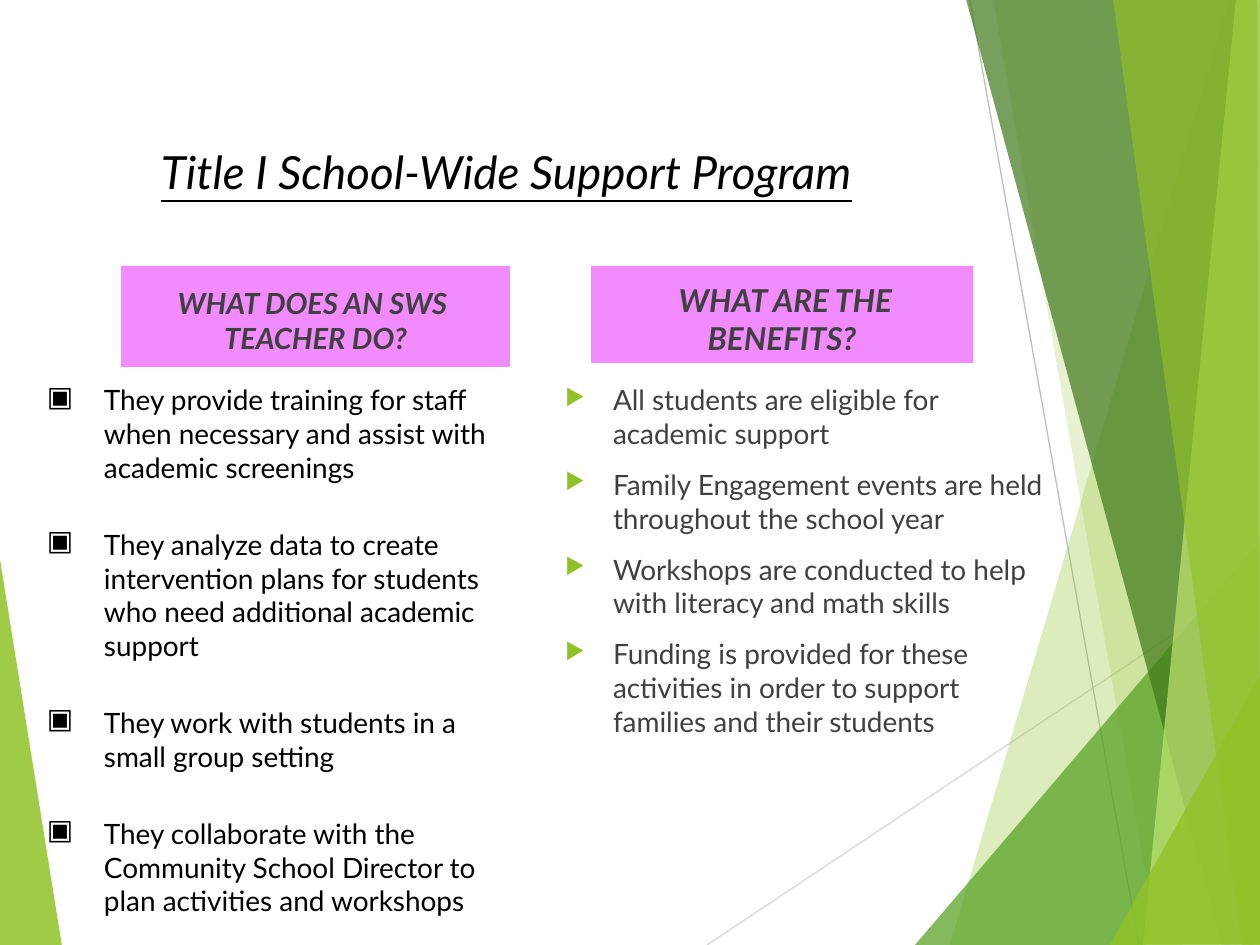
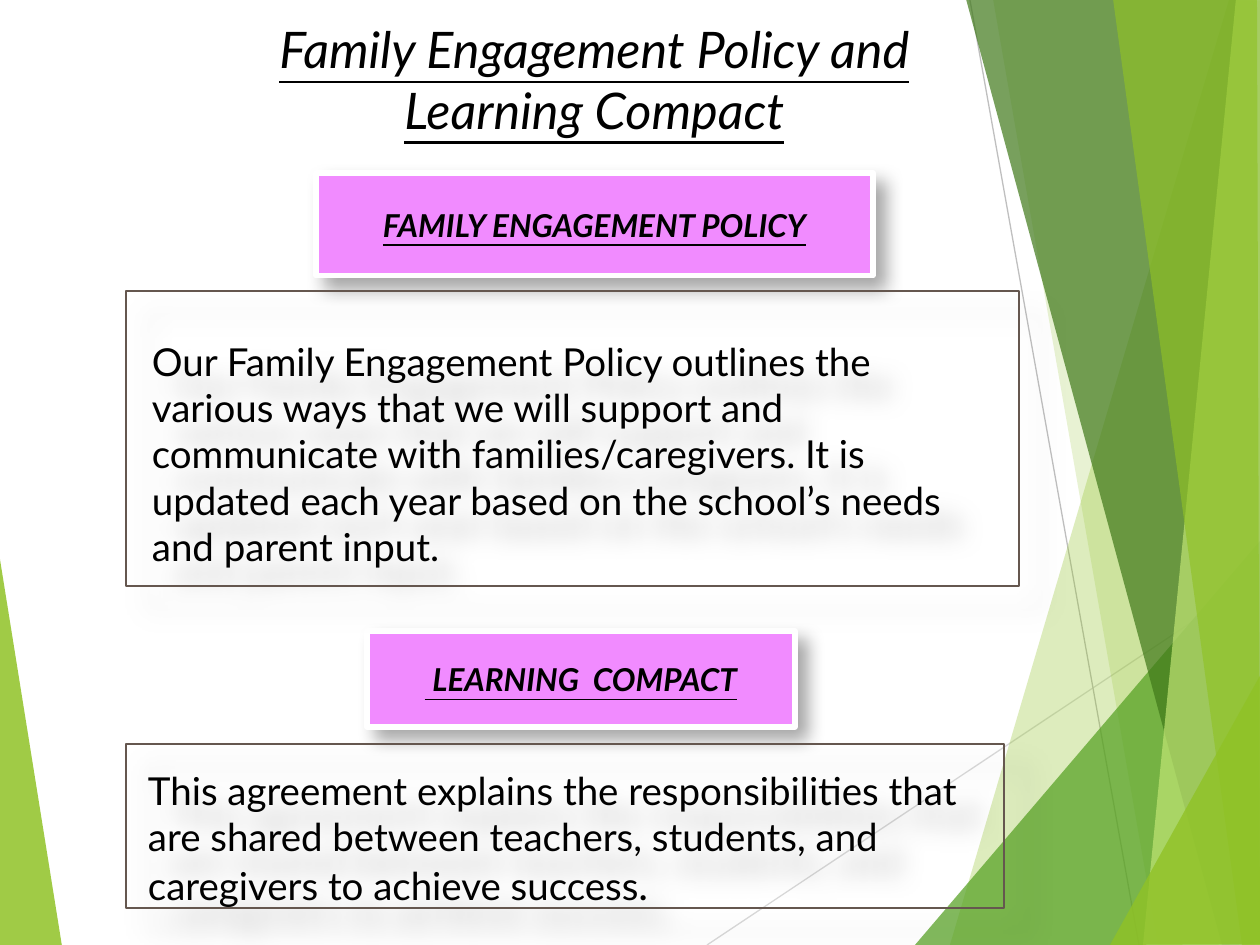
from lxml import etree
from pptx import Presentation
from pptx.dml.color import RGBColor
from pptx.enum.shapes import MSO_CONNECTOR, MSO_SHAPE
from pptx.enum.text import MSO_ANCHOR, PP_ALIGN
from pptx.oxml.ns import qn
from pptx.util import Emu, Pt

RECTANGLE = MSO_SHAPE.RECTANGLE
STRAIGHT = MSO_CONNECTOR.STRAIGHT
TOP, MIDDLE, BOTTOM = MSO_ANCHOR.TOP, MSO_ANCHOR.MIDDLE, MSO_ANCHOR.BOTTOM
LEFT, CENTER = PP_ALIGN.LEFT, PP_ALIGN.CENTER

PX = 914400 / 126
FONT = "Lato"
INSETS = (13, 6, 13, 6)
COLORS = {
    "lime": "90C226", "pale": "C0E474", "green": "54A021", "forest": "3F7819",
    "pink": "F18BFF", "brown": "65574F", "black": "000000", "gray": "404040",
    "white": "FFFFFF", "ray": "D9D9D9", "dark_ray": "BFBFBF",
}

# Colour, opacity in percent, corners
LEFT_FACET = ("lime", 85, [(-1, 553), (62, 946), (-1, 945)])
RIGHT_FACETS = [
    ("lime", 30, [(1229, 0), (950, 945), (1262, 946), (1261, 1)]),
    ("lime", 20, [(993, -1), (1158, 945), (1261, 945), (1261, -1)]),
    ("green", 72, [(915, 945), (1260, 541), (1261, 945)]),
    ("forest", 70, [(966, -1), (1222, 945), (1261, 944), (1261, -1)]),
    ("pale", 70, [(1236, -1), (1143, 945), (1261, 945), (1260, -1)]),
    ("lime", 65, [(1113, -1), (1242, 945), (1260, 945), (1257, -1)]),
    ("lime", 80, [(1110, 945), (1261, 674), (1261, 944)]),
]
RAYS = [("ray", (707, 945, 1261, 576)), ("dark_ray", (970, 0, 1139, 945))]

# Opacity in percent, blur and distance in points
HEADING_SHADOW = (35, 10.2, 8)
BODY_SHADOW = (25, 15, 18)

TEACHER_DUTIES = [
    "They provide training for staff when necessary and assist with academic screenings",
    "They analyze data to create intervention plans for students who need additional "
    "academic support",
    "They work with students in a small group setting",
    "They collaborate with the Community School Director to plan activities and workshops",
]
BENEFITS = [
    "All students are eligible for academic support",
    "Family Engagement events are held throughout the school year",
    "Workshops are conducted to help with literacy and math skills",
    "Funding is provided for these activities in order to support families and their students",
]


def px(length):
    return Emu(round(length * PX))


def rgb(color):
    return RGBColor.from_string(COLORS[color])


def add_facet(slide, color, opacity, corners):
    builder = slide.shapes.build_freeform(*corners[0], scale=PX)
    builder.add_line_segments(corners[1:], close=True)
    facet = builder.convert_to_shape()
    facet.shadow.inherit = False
    facet.fill.solid()
    facet.fill.fore_color.rgb = rgb(color)
    facet.line.fill.background()
    tint = next(facet._element.spPr.iter(qn("a:srgbClr")))
    etree.SubElement(tint, qn("a:alpha"), val=str(opacity * 1000))


def add_ray(slide, color, ends):
    ray = slide.shapes.add_connector(STRAIGHT, *map(px, ends))
    ray.line.color.rgb = rgb(color)
    ray.line.width = Pt(0.75)
    etree.SubElement(ray._element.spPr, qn("a:effectLst"))


def add_backdrop(slide):
    add_facet(slide, *LEFT_FACET)
    for ray in RAYS:
        add_ray(slide, *ray)
    for facet in RIGHT_FACETS:
        add_facet(slide, *facet)


def add_shadow(shape, opacity, blur, distance):
    """Cast a soft black shadow towards the lower right."""
    effects = shape._element.spPr.find(qn("a:effectLst"))
    outer = etree.SubElement(
        effects, qn("a:outerShdw"), blurRad=str(Pt(blur)), dist=str(Pt(distance)),
        dir="2700000", algn="tl", rotWithShape="0")
    tint = etree.SubElement(outer, qn("a:srgbClr"), val=COLORS["black"])
    etree.SubElement(tint, qn("a:alpha"), val=str(opacity * 1000))


def add_box(slide, area, fill=None, outline=None, outline_width=0.75, shadow=None):
    box = slide.shapes.add_shape(RECTANGLE, *map(px, area))
    box.shadow.inherit = False
    if fill:
        box.fill.solid()
        box.fill.fore_color.rgb = rgb(fill)
    else:
        box.fill.background()
    if outline:
        box.line.color.rgb = rgb(outline)
        box.line.width = Pt(outline_width)
    else:
        box.line.fill.background()
    if shadow:
        add_shadow(box, *shadow)
    return box


def set_frame(shape, insets=INSETS, anchor=TOP):
    frame = shape.text_frame
    frame.word_wrap = True
    frame.vertical_anchor = anchor
    (frame.margin_left, frame.margin_top,
     frame.margin_right, frame.margin_bottom) = map(px, insets)
    return frame


def add_run(paragraph, text, size, color="black", bold=False, italic=False, underline=False):
    run = paragraph.add_run()
    run.text = text
    font = run.font
    font.name, font.size = FONT, Pt(size)
    font.bold, font.italic, font.underline = bold, italic, underline
    font.color.rgb = rgb(color)


def add_title(slide, text, area, size, insets, anchor, align):
    title = slide.shapes.add_textbox(*map(px, area))
    paragraph = set_frame(title, insets, anchor).paragraphs[0]
    paragraph.alignment = align
    add_run(paragraph, text, size, italic=True, underline=True)


def add_column_heading(slide, area, lines, size, insets, anchor):
    frame = set_frame(add_box(slide, area, "pink"), insets, anchor)
    for index, line in enumerate(lines):
        paragraph = frame.add_paragraph() if index else frame.paragraphs[0]
        paragraph.alignment = CENTER
        add_run(paragraph, line, size, "gray", bold=True, italic=True)


def add_policy_heading(slide, area, lead, text):
    """Add a shadowed heading whose lead is underlined but upright."""
    heading = add_box(slide, area, "pink", "white", 3, HEADING_SHADOW)
    paragraph = set_frame(heading, anchor=MIDDLE).paragraphs[0]
    paragraph.alignment = CENTER
    if lead:
        add_run(paragraph, lead, 18, bold=True, underline=True)
    add_run(paragraph, text, 18, bold=True, italic=True, underline=True)


def add_body_panel(slide, area, insets):
    panel = add_box(slide, area, outline="brown", shadow=BODY_SHADOW)
    paragraph = set_frame(panel, insets).paragraphs[0]
    paragraph.alignment = LEFT
    return paragraph


def set_bullet(paragraph, symbol, color, percent, indent, hang):
    properties = paragraph._p.get_or_add_pPr()
    properties.set("marL", str(px(indent)))
    properties.set("indent", str(-px(hang)))
    tint = etree.SubElement(properties, qn("a:buClr"))
    etree.SubElement(tint, qn("a:srgbClr"), val=COLORS[color])
    etree.SubElement(properties, qn("a:buSzPct"), val=str(percent * 1000))
    etree.SubElement(properties, qn("a:buChar"), char=symbol)


def add_list(slide, area, items, color, gap, bullet):
    frame = set_frame(slide.shapes.add_textbox(*map(px, area)))
    for index, item in enumerate(items):
        paragraph = frame.add_paragraph() if index else frame.paragraphs[0]
        if index:
            paragraph.space_before = Pt(gap)
        set_bullet(paragraph, *bullet)
        add_run(paragraph, item, 16, color)


def build_support_program(slide):
    add_title(slide, "Title I School-Wide Support Program", (84, 84, 874, 173),
              26.1, (77, 70, 13, 6), TOP, LEFT)
    add_column_heading(slide, (121, 266, 389, 101),
                       ["WHAT DOES AN SWS ", "TEACHER DO?"], 16.6, (13, 14, 13, 6), MIDDLE)
    add_list(slide, (15, 377, 495, 455), TEACHER_DUTIES, "black", 25,
             ("▣", "black", 100, 76, 57))
    add_column_heading(slide, (591, 266, 382, 97),
                       [" WHAT ARE THE BENEFITS?"], 18, INSETS, BOTTOM)
    add_list(slide, (552, 377, 508, 543), BENEFITS, "gray", 10,
             ("▶", "lime", 80, 48, 48))


def build_policy_and_compact(slide):
    add_title(slide, "Family Engagement Policy and Learning Compact", (197, 38, 795, 142),
              28.8, (13, 6, 13, 66), MIDDLE, CENTER)
    add_policy_heading(slide, (316, 173, 557, 103), "", "FAMILY ENGAGEMENT POLICY")
    add_policy_heading(slide, (367, 631, 428, 96), " ", "LEARNING  COMPACT")

    policy = add_body_panel(slide, (126, 291, 893, 295), (26, 47, 13, 6))
    add_run(policy, "Our Family Engagement Policy outlines the", 22)
    policy.add_line_break()
    add_run(policy, "various ways that we will support and communicate with "
            "families/caregivers. It is updated each year based on the school’s "
            "needs and parent input.", 22)

    compact = add_body_panel(slide, (126, 744, 878, 164), (22, 23, 13, 6))
    add_run(compact, "This agreement explains the responsibilities that are shared between "
            "teachers, students, and caregivers to achieve success", 22)
    add_run(compact, ".", 23.6)


def main():
    deck = Presentation()
    deck.slide_width, deck.slide_height = px(1260), px(945)
    for build in (build_support_program, build_policy_and_compact):
        slide = deck.slides.add_slide(deck.slide_layouts[6])
        add_backdrop(slide)
        build(slide)
    deck.save("out.pptx")


if __name__ == "__main__":
    main()
